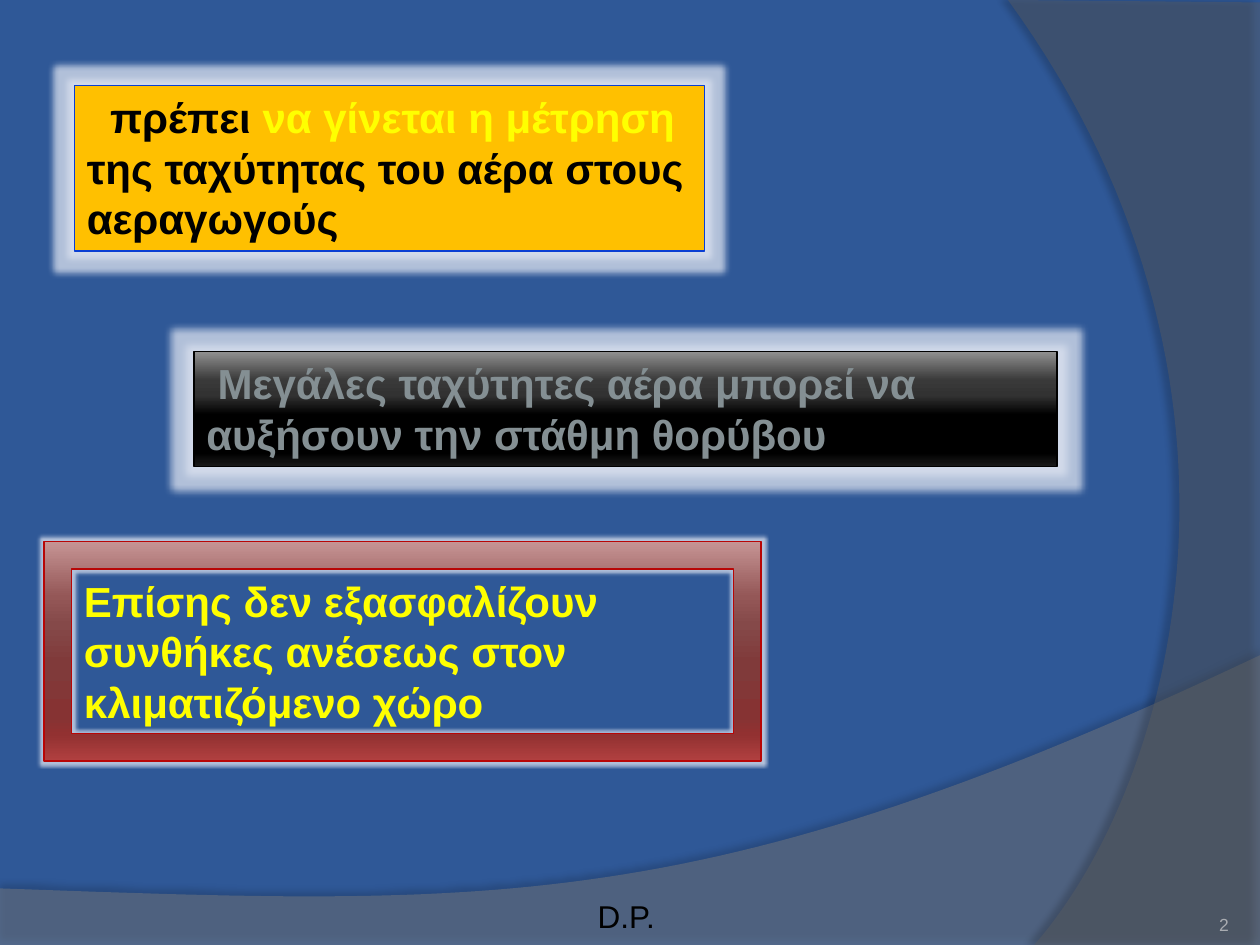
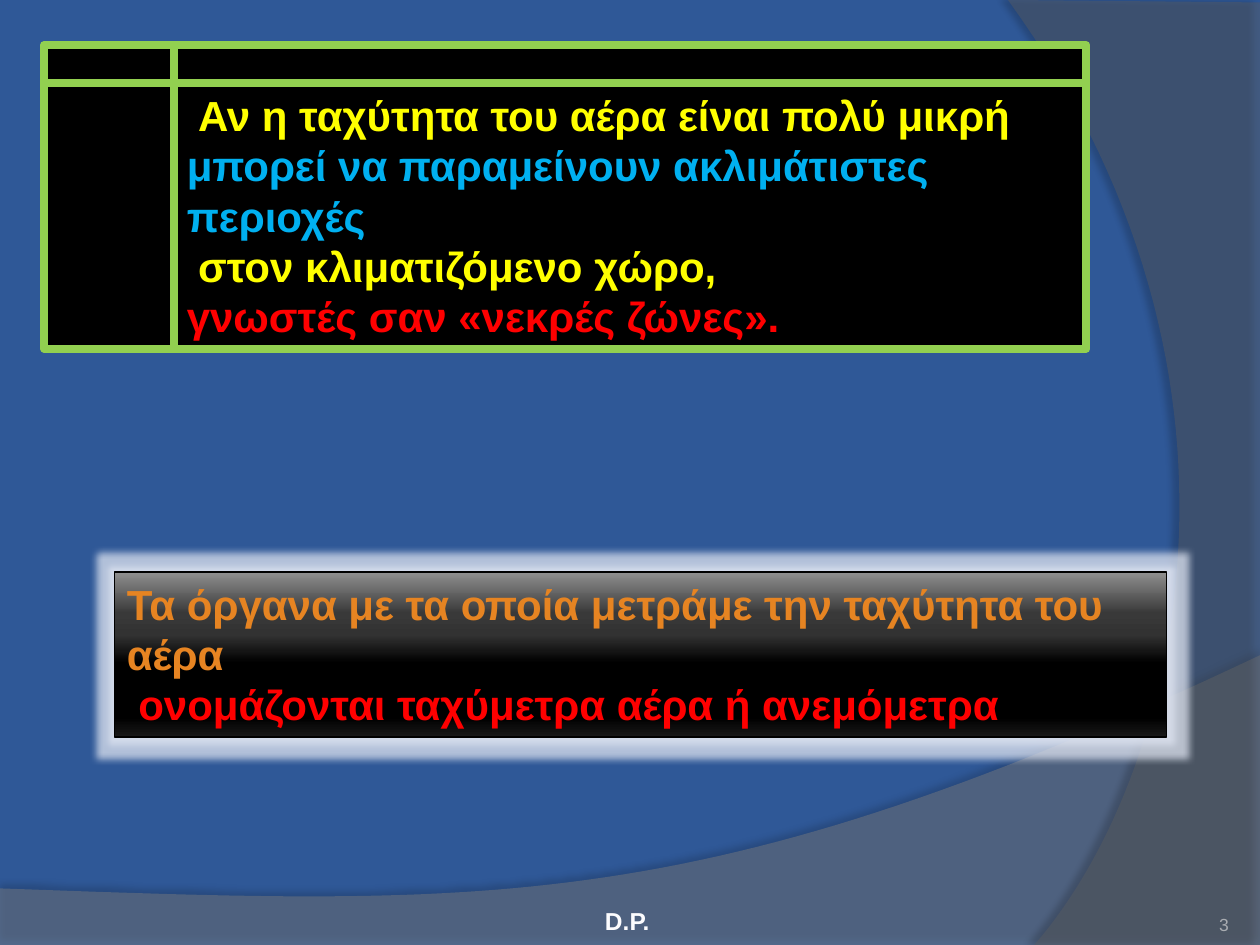
from dataclasses import dataclass

from pptx import Presentation
from pptx.dml.color import RGBColor
from pptx.enum.shapes import MSO_SHAPE
from pptx.enum.text import MSO_ANCHOR, MSO_AUTO_SIZE, PP_ALIGN
from pptx.oxml import parse_xml
from pptx.oxml.ns import nsdecls, qn
from pptx.util import Cm, Pt


@dataclass(frozen=True)
class Theme:
    font: str = "Arial"
    body_size: float = 24
    number_size: float = 10
    background: str = "2F5897"
    wave: str = "7F7F7F"
    side: str = "5E5E5E"
    black: str = "000000"
    white: str = "FCFCFE"
    glow: str = "DDE3F0"
    number: str = "A9ACB1"
    amber: str = "FFC000"
    yellow: str = "FFFF00"
    sky: str = "00B0F0"
    red: str = "FF0000"
    green: str = "92D050"
    orange: str = "E68422"
    purple: str = "7030A0"
    blue_line: str = "0A3ED3"
    red_line: str = "B80606"
    # Gradients run from top to bottom: position in percent, colour
    gloss_black: tuple = ((0, "909090"), (25, "393939"), (38, "323232"),
                          (55, "000000"), (88, "000000"), (100, "181818"))
    gloss_red: tuple = ((0, "C69494"), (25, "945757"), (38, "854949"), (55, "803A3A"),
                        (80, "863333"), (88, "923131"), (100, "B14040"))
    steel: tuple = ((0, "8A9499"), (25, "848F93"), (50, "6E7A7F"),
                    (75, "848F93"), (100, "8A9499"))


THEME = Theme()


@dataclass(frozen=True)
class Span:
    text: str
    paint: object
    outline: str = ""
    outline_width: float = 0.9


# Paint and effects
def apply_paint(fill, parent, paint):
    """Fill with a colour, or with a gradient given as stops."""
    if isinstance(paint, str):
        fill.solid()
        fill.fore_color.rgb = RGBColor.from_string(paint)
        return
    stops = "".join(f'<a:gs pos="{position * 1000}"><a:srgbClr val="{color}"/></a:gs>'
                    for position, color in paint)
    fill.background()
    parent.replace(parent.find(qn("a:noFill")), parse_xml(
        f'<a:gradFill {nsdecls("a")} rotWithShape="1"><a:gsLst>{stops}</a:gsLst>'
        '<a:lin ang="5400000" scaled="0"/></a:gradFill>'))


def add_effect(shape, kind, color, alpha, **settings):
    shape.shadow.inherit = False
    attributes = " ".join(f'{name}="{value}"' for name, value in settings.items())
    shape.element.spPr.find(qn("a:effectLst")).append(parse_xml(
        f'<a:{kind} {nsdecls("a")} {attributes}><a:srgbClr val="{color}">'
        f'<a:alpha val="{alpha * 1000}"/></a:srgbClr></a:{kind}>'))


# Text
def add_span(para, span, size, bold):
    run = para.add_run()
    run.text = span.text
    run.font.name = THEME.font
    run.font.size = Pt(size)
    run.font.bold = bold
    properties = run._r.get_or_add_rPr()
    apply_paint(run.font.fill, properties, span.paint)
    if span.outline:
        properties.insert(0, parse_xml(
            f'<a:ln {nsdecls("a")} w="{Pt(span.outline_width)}"><a:solidFill>'
            f'<a:srgbClr val="{span.outline}"/></a:solidFill></a:ln>'))


def add_paragraphs(frame, paragraphs, size, bold=True, align=PP_ALIGN.LEFT):
    """Each paragraph is a first-line indent in cm, followed by its spans."""
    for index, (indent, *spans) in enumerate(paragraphs):
        para = frame.add_paragraph() if index else frame.paragraphs[0]
        para.alignment = align
        if indent:
            para._p.get_or_add_pPr().set("indent", str(Cm(indent)))
        for span in spans:
            add_span(para, span, size, bold)


# Shapes
def add_box(page, kind, place, paint, line, paragraphs, line_width=0.75, glow=0):
    box = page.shapes.add_shape(kind, *map(Cm, place))
    apply_paint(box.fill, box.element.spPr, paint)
    box.line.color.rgb = RGBColor.from_string(line)
    box.line.width = Pt(line_width)
    box.shadow.inherit = False
    if glow:
        add_effect(box, "glow", THEME.glow, 75, rad=Pt(glow))
    frame = box.text_frame
    frame.word_wrap = True
    frame.auto_size = MSO_AUTO_SIZE.SHAPE_TO_FIT_TEXT
    frame.vertical_anchor = MSO_ANCHOR.TOP
    add_paragraphs(frame, paragraphs, THEME.body_size)


def add_label(page, left, width, span, size, align, bold=False, top_inset=0):
    box = page.shapes.add_textbox(Cm(left), Cm(17.83), Cm(width), Cm(1.02))
    frame = box.text_frame
    frame.word_wrap = True
    frame.vertical_anchor = MSO_ANCHOR.BOTTOM
    frame.margin_left = frame.margin_right = frame.margin_bottom = 0
    frame.margin_top = Cm(top_inset)
    add_paragraphs(frame, [(0, span)], size, bold, align)


def curve_points(start, pull, push, end, steps=60):
    """Points along a cubic curve, both ends included."""
    for step in range(steps + 1):
        t = step / steps
        weights = ((1 - t) ** 3, 3 * t * (1 - t) ** 2, 3 * t * t * (1 - t), t ** 3)
        yield tuple(sum(weight * point[axis] for weight, point
                        in zip(weights, (start, pull, push, end))) for axis in (0, 1))


def add_sweep(page, corners, curve, color, alpha, shadow_alpha, distance, direction):
    points = [(Cm(x), Cm(y)) for x, y in (*corners, *curve_points(*curve))]
    builder = page.shapes.build_freeform(*points[0], scale=1.0)
    builder.add_line_segments(points[1:], close=True)
    sweep = builder.convert_to_shape()
    apply_paint(sweep.fill, sweep.element.spPr, color)
    sweep.element.spPr.find(qn("a:solidFill"))[0].append(
        parse_xml(f'<a:alpha {nsdecls("a")} val="{alpha * 1000}"/>'))
    sweep.line.fill.background()
    add_effect(sweep, "outerShdw", THEME.black, shadow_alpha, blurRad=Pt(4),
               dist=Pt(distance), dir=direction * 60000, algn="ctr", rotWithShape=0)


# Shared page: background, two sweeps, footer and number
def add_page(deck, number, footer_color, footer_size, footer_bold):
    page = deck.slides.add_slide(deck.slide_layouts[6])
    apply_paint(page.background.fill, None, THEME.background)
    add_sweep(page, [(0, 19.05), (25.4, 19.05)],
              [(25.4, 13.21), (14.2, 18.52), (9.93, 18.26), (0, 17.91)],
              THEME.wave, 45, 35, 3.5, 270)
    add_sweep(page, [(25.4, 0.05), (25.4, 19.05)],
              [(20.85, 19.05), (23.75, 15.72), (25.86, 7.62), (20.32, 0)],
              THEME.side, 40, 45, 4, 180)
    add_label(page, 8.69, 8.05, Span("D.P. ", footer_color), footer_size,
              PP_ALIGN.CENTER, footer_bold, top_inset=0.13)
    add_label(page, 22.66, 2.11, Span(str(number), THEME.number), THEME.number_size,
              PP_ALIGN.RIGHT)
    return page


def build_measurement_page(deck):
    page = add_page(deck, 2, THEME.black, 18, False)
    add_box(page, MSO_SHAPE.RECTANGLE, (1.5, 1.73, 12.7, 3.33), THEME.amber,
            THEME.blue_line, [
                (0.47, Span("πρέπει ", THEME.black),
                 Span("να γίνεται η μέτρηση ", THEME.yellow, THEME.purple, 4),
                 Span("της ταχύτητας του αέρα στους αεραγωγούς", THEME.black))], glow=8)
    add_box(page, MSO_SHAPE.RECTANGLE, (3.91, 7.09, 17.4, 2.31), THEME.gloss_black,
            THEME.black, [
                (0.23, Span("Μεγάλες ταχύτητες αέρα μπορεί να αυξήσουν την στάθμη θορύβου",
                            THEME.steel, THEME.amber))], glow=9)
    add_box(page, MSO_SHAPE.FRAME, (0.89, 10.92, 14.45, 4.42), THEME.gloss_red,
            THEME.red_line, [
                (0, Span("Επίσης δεν εξασφαλίζουν συνθήκες ανέσεως στον κλιματιζόμενο χώρο",
                         THEME.yellow, THEME.sky))], glow=4)


def build_dead_zones_page(deck):
    page = add_page(deck, 3, THEME.white, 14, True)
    add_box(page, MSO_SHAPE.FLOWCHART_INTERNAL_STORAGE, (0.89, 0.91, 21.01, 6.12),
            THEME.black, THEME.green, [
                (0.23, Span("Αν η ταχύτητα του αέρα είναι πολύ μικρή",
                            THEME.yellow, THEME.sky)),
                (0, Span("μπορεί να παραμείνουν ακλιμάτιστες περιοχές",
                         THEME.sky, THEME.sky)),
                (0.23, Span("στον κλιματιζόμενο χώρο,", THEME.yellow, THEME.sky)),
                (0, Span("γνωστές σαν «νεκρές ζώνες».", THEME.red, THEME.sky))],
            line_width=4.5)
    add_box(page, MSO_SHAPE.RECTANGLE, (2.31, 11.53, 21.21, 3.33), THEME.gloss_black,
            THEME.black, [
                (0, Span("Τα όργανα με τα οποία μετράμε την ταχύτητα του αέρα",
                         THEME.orange, THEME.green, 0.75)),
                (0.23, Span("ονομάζονται ταχύμετρα αέρα ή ανεμόμετρα",
                            THEME.red, THEME.sky, 0.75))], glow=8)


def main():
    deck = Presentation()
    deck.slide_width, deck.slide_height = Cm(25.4), Cm(19.05)
    build_measurement_page(deck)
    build_dead_zones_page(deck)
    deck.save("out.pptx")


if __name__ == "__main__":
    main()
